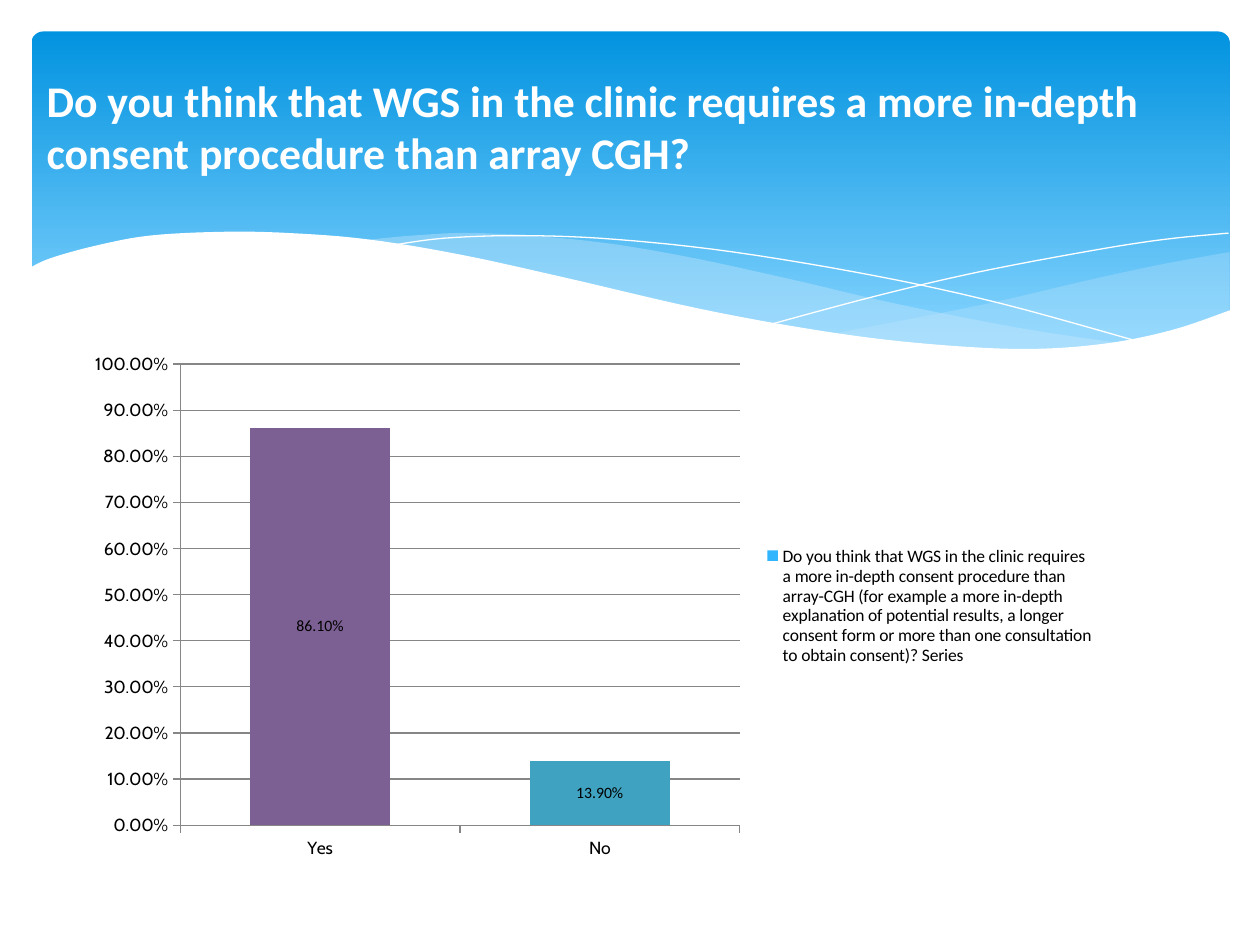
from lxml import etree
from pptx import Presentation
from pptx import util as u
from pptx.chart.data import CategoryChartData
from pptx.dml.color import RGBColor
from pptx.enum import chart as ch, shapes, text
from pptx.oxml import parse_xml
from pptx.oxml.ns import qn

COLORS = {
    "white": "FFFFFF", "black": "000000", "deep": "0293E0", "sky": "83D3FE",
    "mist": "C6E7FC", "series": "31B6FD", "yes": "7C6093", "no": "40A2C1",
    "axis": "868686",
}
C_NS = "http://schemas.openxmlformats.org/drawingml/2006/chart"


def rgb(name):
    return RGBColor.from_string(COLORS[name])


def smooth(points, steps=6):
    """Catmull-Rom curve through the points, as a list of short segments."""
    padded = [points[0], *points, points[-1]]
    curve = [points[0]]
    for a, b, c, d in zip(padded, padded[1:], padded[2:], padded[3:]):
        for i in range(1, steps + 1):
            t = i / steps
            curve.append(tuple(
                (2 * q + (r - p) * t + (2 * p - 5 * q + 4 * r - s) * t ** 2
                 + (3 * q - p - 3 * r + s) * t ** 3) / 2
                for p, q, r, s in zip(a, b, c, d)))
    return curve


def set_layout(parent, after, box, size, inner=False):
    """Place a chart part; box and chart size are in inches."""
    for old in parent.findall(qn("c:layout")):
        parent.remove(old)
    layout = parse_xml(f'<c:layout xmlns:c="{C_NS}"><c:manualLayout/></c:layout>')
    values = [("layoutTarget", "inner")] if inner else []
    values += [("xMode", "edge"), ("yMode", "edge")]
    values += [(tag, length / whole) for tag, length, whole in zip("xywh", box, size * 2)]
    for tag, value in values:
        etree.SubElement(layout[0], qn(f"c:{tag}")).set("val", str(value))
    parent.insert(after, layout)


class SlideBuilder:
    heading_font = "Calibri"
    axis_font = "Cabin"

    def __init__(self, prs):
        self.s = prs.slides.add_slide(prs.slide_layouts[5])

    def style_font(self, font, size, color, name):
        font.size, font.name = u.Pt(size), name
        font.color.rgb = rgb(color)

    def banner(self, x, y, w, h):
        sp = self.s.shapes.add_shape(
            shapes.MSO_SHAPE.ROUNDED_RECTANGLE, *map(u.Inches, (x, y, w, h)))
        sp.adjustments[0] = 0.034
        sp.shadow.inherit = False
        sp.line.fill.background()
        sp.fill.gradient()
        sp.fill.gradient_angle = 270
        stops = zip(sp.fill.gradient_stops, ("deep", "sky"), (0, 0.9))
        for stop, color, position in stops:
            stop.color.rgb, stop.position = rgb(color), position

    def outline(self, points, closed):
        start, *rest = [(u.Inches(x), u.Inches(y)) for x, y in points]
        builder = self.s.shapes.build_freeform(*start)
        builder.add_line_segments(rest, close=closed)
        sp = builder.convert_to_shape()
        sp.shadow.inherit = False
        return sp

    def wave(self, points, color, alpha=None):
        sp = self.outline(points, True)
        sp.fill.solid()
        sp.fill.fore_color.rgb = rgb(color)
        sp.line.fill.background()
        if alpha:
            fill = sp.element.spPr.find(qn("a:solidFill"))
            etree.SubElement(fill[0], qn("a:alpha")).set("val", str(alpha * 1000))

    def strand(self, points):
        sp = self.outline(smooth(points), False)
        sp.fill.background()
        sp.line.color.rgb = rgb("white")
        sp.line.width = u.Pt(0)

    def title(self, words, x, y, w, h):
        sp = self.s.shapes.title
        sp.left, sp.top, sp.width, sp.height = map(u.Inches, (x, y, w, h))
        sp.element.getparent().append(sp.element)  # in front of the banner
        tf = sp.text_frame
        tf.text = words
        tf.word_wrap = True
        tf.auto_size = text.MSO_AUTO_SIZE.NONE
        tf.vertical_anchor = text.MSO_ANCHOR.MIDDLE
        p = tf.paragraphs[0]
        p.alignment = text.PP_ALIGN.LEFT
        p.font.bold = True
        self.style_font(p.font, 25, "white", self.heading_font)

    def column_chart(self, name, answers, x, y, w, h):
        data = CategoryChartData(number_format="0.00%")
        data.categories = list(answers)
        data.add_series(name, [value for value, _ in answers.values()])
        chart = self.s.shapes.add_chart(
            ch.XL_CHART_TYPE.COLUMN_CLUSTERED,
            *map(u.Inches, (x, y, w, h)), data).chart
        chart.has_title = False
        self.style_font(chart.font, 10, "black", self.axis_font)

        # Columns and their labels
        plot = chart.plots[0]
        plot.gap_width = 100
        plot.vary_by_categories = False
        series = plot.series[0]
        series.format.fill.solid()
        series.format.fill.fore_color.rgb = rgb("series")
        for i, (_, color) in enumerate(answers.values()):
            fill = series.points[i].format.fill
            fill.solid()
            fill.fore_color.rgb = rgb(color)
        labels = series.data_labels
        labels.show_value = True
        labels.position = ch.XL_LABEL_POSITION.CENTER
        labels.number_format, labels.number_format_is_linked = "0.00%", False
        self.style_font(labels.font, 9, "black", self.heading_font)

        # Axes
        axis = chart.value_axis
        axis.minimum_scale, axis.maximum_scale, axis.major_unit = 0, 1, 0.1
        axis.tick_labels.number_format = "0.00%"
        axis.tick_labels.number_format_is_linked = False
        axis.has_major_gridlines = True
        for part in (axis, axis.major_gridlines, chart.category_axis):
            part.format.line.color.rgb = rgb("axis")
            part.format.line.width = u.Pt(0.75)
        for part in (axis, chart.category_axis):
            part.major_tick_mark = ch.XL_TICK_MARK.OUTSIDE

        # Legend and placement
        chart.has_legend = True
        legend = chart.legend
        legend.position = ch.XL_LEGEND_POSITION.RIGHT
        legend.include_in_layout = False
        self.style_font(legend.font, 10, "black", self.heading_font)
        root = chart.element
        set_layout(root.find(".//" + qn("c:plotArea")), 0,
                   (0.84, 0.16, 4.44, 3.66), (w, h), inner=True)
        set_layout(root.find(".//" + qn("c:legend")), 1,
                   (5.5, 1.58, 2.57, 1), (w, h))


def main():
    prs = Presentation()
    prs.slide_width, prs.slide_height = u.Inches(10), u.Inches(7.5)
    slide = SlideBuilder(prs)

    # Banner with translucent waves, thin strands and the white lower edge
    slide.banner(0.25, 0.25, 9.51, 2.7)
    slide.wave(
        smooth([(9.76, 2), (9.21, 2.1), (8.61, 2.23), (7.79, 2.42), (6.61, 2.65)])
        + smooth([(6.61, 2.65), (7.32, 2.74), (8.03, 2.78), (8.72, 2.74),
                  (9.28, 2.63), (9.76, 2.47)]), "mist", 29)
    slide.wave(
        smooth([(8.93, 2.73), (8.07, 2.6), (7.06, 2.4), (6.29, 2.22), (5.41, 2.03),
                (4.65, 1.91), (3.8, 1.85), (3.28, 1.87), (2.86, 1.91)])
        + smooth([(2.86, 1.91), (3.62, 2.03), (4.49, 2.22), (5.66, 2.48),
                  (6.65, 2.66), (7.48, 2.76), (8.18, 2.78), (8.93, 2.73)]),
        "mist", 40)
    slide.strand([(3.09, 1.95), (3.53, 1.89), (4.16, 1.87), (4.89, 1.9), (5.82, 2),
                  (6.95, 2.19), (7.95, 2.41), (9.07, 2.72)])
    slide.strand([(6.13, 2.57), (6.95, 2.35), (7.76, 2.16), (8.66, 1.99),
                  (9.24, 1.9), (9.75, 1.85)])
    lower_edge = smooth([
        (9.77, 2.46), (9.3, 2.62), (8.75, 2.73), (8.09, 2.77), (7.26, 2.72),
        (6.48, 2.62), (5.55, 2.45), (4.47, 2.2), (3.65, 2.02), (2.92, 1.9),
        (2.3, 1.85), (1.77, 1.84), (1.19, 1.87), (0.76, 1.95), (0.4, 2.05),
        (0.23, 2.13)])
    slide.wave(lower_edge + [(0.23, 3.29), (9.77, 3.29)], "white")

    # Question and answers
    slide.title("Do you think that WGS in the clinic requires a more in-depth "
                "consent procedure than array CGH?", 0.27, 0.53, 9.69, 0.94)
    slide.column_chart(
        "Do you think that WGS in the clinic requires a more in-depth consent "
        "procedure than array-CGH (for example a more in-depth explanation of "
        "potential results, a longer consent form or more than one consultation "
        "to obtain consent)? Series",
        {"Yes": (0.861, "yes"), "No": (0.139, "no")}, 0.59, 2.73, 8.19, 4.17)

    prs.save("out.pptx")


if __name__ == "__main__":
    main()
